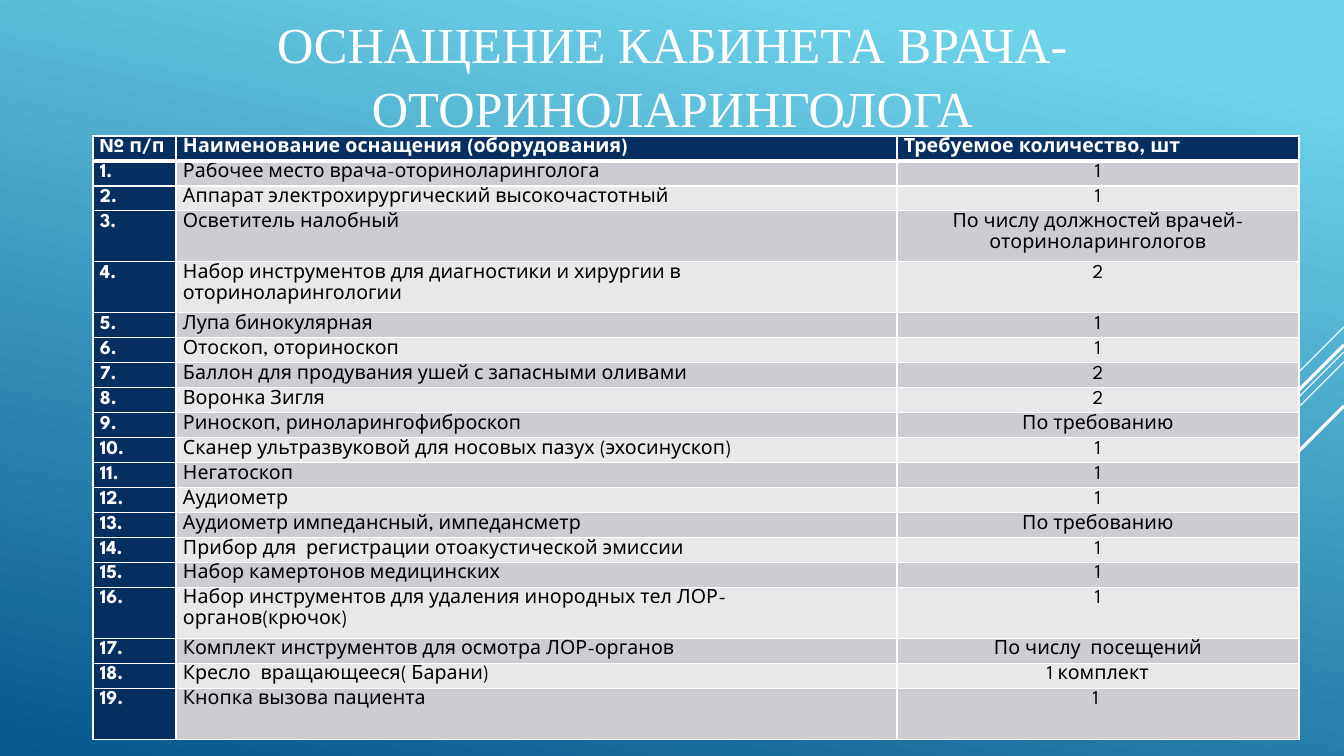
from lxml.etree import SubElement
from pptx import Presentation
from pptx.dml.color import RGBColor
from pptx.enum.shapes import MSO_CONNECTOR
from pptx.enum.text import MSO_ANCHOR, MSO_AUTO_SIZE, PP_ALIGN
from pptx.oxml.ns import qn
from pptx.util import Emu, Pt

WHITE = RGBColor(0xFF, 0xFF, 0xFF)
BLACK = RGBColor(0x00, 0x00, 0x00)
NAVY = RGBColor(0x05, 0x2F, 0x61)
DARK_BAND = RGBColor(0xCC, 0xCD, 0xD2)
LIGHT_BAND = RGBColor(0xE7, 0xE8, 0xEA)
SKY = RGBColor(0x6E, 0xD2, 0xEB)
DEEP_BLUE = RGBColor(0x06, 0x58, 0x8E)

WIDTH, HEIGHT = 1344, 756
SHORT_ROW, TALL_ROW = 25, 51
COLUMN_WIDTHS = [83, 721, 402]
TALL_NUMBERS = {3, 4, 16, 19}

HEADER = ["№ п/п", "Наименование оснащения (оборудования)", "Требуемое количество, шт"]
EQUIPMENT = [
    ("Рабочее место врача-оториноларинголога", "1"),
    ("Аппарат электрохирургический высокочастотный", "1"),
    ("Осветитель налобный", "По числу должностей врачей-оториноларингологов"),
    ("Набор инструментов для диагностики и хирургии в оториноларингологии", "2"),
    ("Лупа бинокулярная", "1"),
    ("Отоскоп, оториноскоп", "1"),
    ("Баллон для продувания ушей с запасными оливами", "2"),
    ("Воронка Зигля", "2"),
    ("Риноскоп, риноларингофиброскоп", "По требованию"),
    ("Сканер ультразвуковой для носовых пазух (эхосинускоп)", "1"),
    ("Негатоскоп", "1"),
    ("Аудиометр", "1"),
    ("Аудиометр импедансный, импедансметр", "По требованию"),
    ("Прибор для  регистрации отоакустической эмиссии", "1"),
    ("Набор камертонов медицинских", "1"),
    ("Набор инструментов для удаления инородных тел ЛОР-органов(крючок)", "1"),
    ("Комплект инструментов для осмотра ЛОР-органов", "По числу  посещений"),
    ("Кресло  вращающееся( Барани)", "1 комплект"),
    ("Кнопка вызова пациента", "1 "),
]
DIAGONALS = [(327, 101, 0.75), (352, 329, 0.75), (362, 209, 0.75), (345, 193, 2.25), (406, 140, 2.25)]


def px(length):
    return Emu(round(length * 914400 / 100.8))


def add_border(cell, side, points):
    border = SubElement(cell._tc.get_or_add_tcPr(), qn(f"a:ln{side}"), w=str(Pt(points)))
    fill = SubElement(border, qn("a:solidFill"))
    SubElement(fill, qn("a:srgbClr"), val=str(WHITE))


deck = Presentation()
deck.slide_width, deck.slide_height = px(WIDTH), px(HEIGHT)
page = deck.slides.add_slide(deck.slide_layouts[5])

backdrop = page.background.fill
backdrop.gradient()
backdrop.gradient_angle = 258
for stop, color, position in zip(backdrop.gradient_stops, (SKY, DEEP_BLUE), (0.1, 1)):
    stop.color.rgb = color
    stop.position = position

for top, reach, weight in DIAGONALS:
    diagonal = page.shapes.add_connector(
        MSO_CONNECTOR.STRAIGHT, px(WIDTH), px(top), px(WIDTH - reach), px(top + reach))
    diagonal.line.color.rgb = WHITE
    diagonal.line.width = Pt(weight)
    SubElement(diagonal._element.spPr, qn("a:effectLst"))

title = page.shapes.title
title.left, title.top, title.width, title.height = px(93), px(19), px(1159), px(110)
title.text_frame.auto_size = MSO_AUTO_SIZE.NONE
title.text_frame.word_wrap = True
title.text_frame.vertical_anchor = MSO_ANCHOR.MIDDLE
para = title.text_frame.paragraphs[0]
para.alignment = PP_ALIGN.CENTER
para.line_spacing = 1.05
span = para.add_run()
span.text = "ОСНАЩЕНИЕ КАБИНЕТА ВРАЧА-ОТОРИНОЛАРИНГОЛОГА"
span.font.name = "Times New Roman"
span.font.size = Pt(36)
span.font.color.rgb = WHITE

rows = [HEADER] + [(f"{number}.", *item) for number, item in enumerate(EQUIPMENT, 1)]
heights = [TALL_ROW if number in TALL_NUMBERS else SHORT_ROW for number in range(len(rows))]
table = page.shapes.add_table(
    len(rows), len(HEADER), px(93), px(136), px(sum(COLUMN_WIDTHS)), px(sum(heights))).table
for column, width in zip(table.columns, COLUMN_WIDTHS):
    column.width = px(width)

for row_index, (texts, height) in enumerate(zip(rows, heights)):
    table.rows[row_index].height = px(height)
    for column_index, text in enumerate(texts):
        cell = table.cell(row_index, column_index)
        is_heading = row_index == 0 or column_index == 0
        add_border(cell, "L", 1)
        add_border(cell, "R", 1)
        add_border(cell, "T", 3 if row_index == 1 else 1)
        add_border(cell, "B", 3 if row_index == 0 else 1)
        cell.fill.solid()
        cell.fill.fore_color.rgb = NAVY if is_heading else DARK_BAND if row_index % 2 else LIGHT_BAND
        cell.margin_left = cell.margin_right = px(7)
        cell.margin_top = cell.margin_bottom = 0
        para = cell.text_frame.paragraphs[0]
        para.line_spacing = 1.15
        para.alignment = PP_ALIGN.CENTER if column_index == 2 and not is_heading else PP_ALIGN.LEFT
        span = para.add_run()
        span.text = text
        span.font.name = "League Spartan"
        span.font.size = Pt(14)
        span.font.bold = is_heading
        span.font.color.rgb = WHITE if is_heading else BLACK

deck.save("out.pptx")
